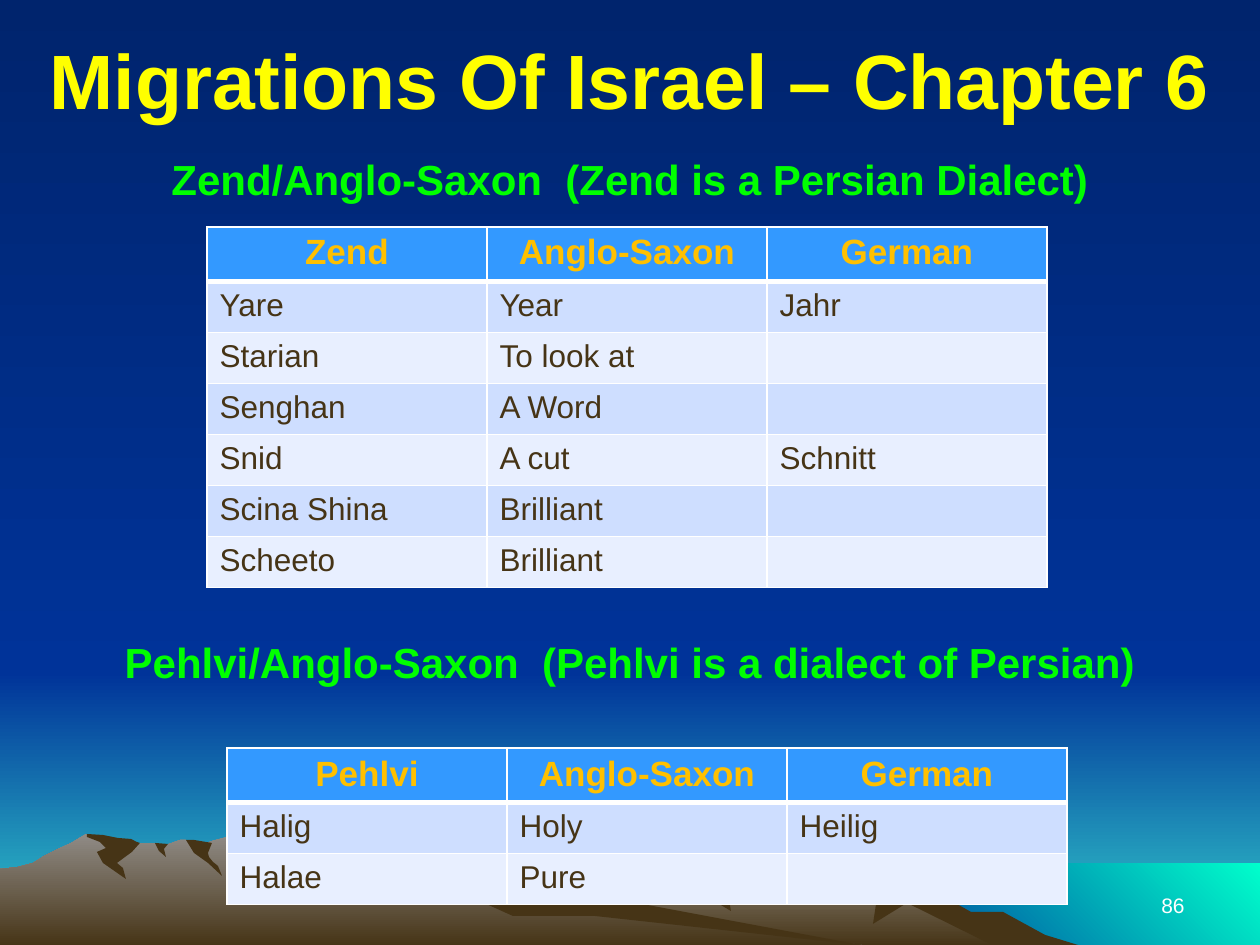
from lxml.etree import SubElement
from pptx import Presentation
from pptx.dml.color import RGBColor
from pptx.enum.text import MSO_ANCHOR as Anchor, PP_ALIGN as Align
from pptx.oxml.ns import qn
from pptx.util import Emu, Pt

EMU_PER_PX = 914400 / 126
WIDTH, HEIGHT = 1260, 945
HORIZON = 672
COLUMN_WIDTH, HEADER_HEIGHT, ROW_HEIGHT = 280, 54, 51
FONT = "Arial"
TITLE_ONLY = 5
DOWN, UP_RIGHT = 270, 45

COLORS = {
    "night": "00246D", "blue": "003399", "teal": "33CCCC", "aqua": "00FFCC",
    "earth": "463416", "right_crest": "A5A29F", "left_crest": "938F8B",
    "title": "FFFF00", "heading": "00FF00", "white": "FFFFFF",
    "header_text": "FFC000", "header_fill": "3399FF",
    "odd_row": "CEDEFF", "even_row": "E8EFFF",
}

RIGHT_RIDGE = [
    (1011, 932), (980, 916), (963, 911), (911, 879), (885, 845), (863, 832),
    (852, 839), (827, 845), (793, 845), (772, 858), (713, 878), (675, 869),
    (667, 852), (663, 848), (641, 843), (626, 845), (612, 848), (597, 833),
    (593, 829), (586, 829), (567, 837), (552, 845), (534, 847), (519, 853),
    (503, 861), (496, 863), (447, 879), (412, 893), (349, 931), (325, 946),
    (1034, 946),
]
RIGHT_SHADOWS = [
    [(1003, 912), (971, 912), (925, 886), (891, 845), (863, 832), (868, 837),
     (863, 845), (871, 857), (879, 885), (873, 924), (907, 903), (998, 948),
     (1081, 946), (1045, 935)],
    [(593, 829), (597, 834), (591, 837), (590, 845), (595, 857), (596, 869),
     (586, 916), (597, 887), (604, 882), (614, 861), (617, 859), (617, 852),
     (626, 845), (621, 844)],
    [(667, 852), (665, 854), (663, 861), (675, 878), (731, 911), (726, 882),
     (746, 868), (718, 872), (683, 863)],
    [(819, 845), (794, 845), (795, 850), (794, 852), (810, 861), (815, 856),
     (828, 862), (822, 852), (827, 845)],
    [(546, 853), (544, 848), (547, 845), (553, 844), (551, 848), (553, 856),
     (547, 862)],
]
LEFT_RIDGE = [
    (869, 946), (840, 942), (544, 897), (446, 838), (417, 835), (412, 842),
    (407, 842), (401, 837), (373, 852), (352, 858), (341, 859), (328, 852),
    (297, 858), (281, 835), (276, 832), (267, 829), (247, 829), (241, 832),
    (227, 837), (212, 841), (202, 845), (186, 840), (180, 840), (166, 845),
    (161, 845), (155, 843), (140, 843), (118, 845), (86, 834), (71, 843),
    (58, 849), (44, 856), (33, 863), (18, 867), (0, 869), (0, 946),
]
LEFT_SHADOWS = [
    [(267, 835), (262, 843), (276, 854), (292, 869), (304, 867), (336, 893),
     (329, 868), (341, 859), (335, 856), (328, 848), (309, 842), (292, 835),
     (277, 833), (268, 830)],
    [(466, 842), (446, 838), (433, 838), (427, 843), (425, 866), (438, 861),
     (445, 867), (457, 871), (471, 897), (513, 916), (595, 916), (869, 946),
     (861, 945), (573, 891), (538, 872), (505, 858), (486, 851)],
    [(401, 840), (403, 839), (401, 837), (407, 840), (412, 840), (416, 849),
     (411, 845), (406, 843), (402, 847)],
    [(194, 840), (212, 843), (208, 853), (209, 857), (213, 862), (218, 866),
     (222, 876), (208, 863), (194, 853), (186, 840)],
    [(168, 844), (164, 849), (166, 857), (159, 851), (155, 843)],
    [(137, 842), (140, 843), (132, 852), (117, 863), (123, 868), (126, 879),
     (103, 863), (97, 852), (106, 848), (100, 842), (87, 837), (87, 834),
     (103, 835), (118, 838), (131, 839)],
]

ZEND_WORDS = [
    ("Zend", "Anglo-Saxon", "German"),
    ("Yare", "Year", "Jahr"),
    ("Starian", "To look at", ""),
    ("Senghan", "A Word", ""),
    ("Snid", "A cut", "Schnitt"),
    ("Scina Shina", "Brilliant", ""),
    ("Scheeto", "Brilliant", ""),
]
PEHLVI_WORDS = [
    ("Pehlvi", "Anglo-Saxon", "German"),
    ("Halig", "Holy", "Heilig"),
    ("Halae", "Pure", ""),
]


def px(length):
    return Emu(round(length * EMU_PER_PX))


def rgb(name):
    return RGBColor.from_string(COLORS[name])


def paint(fill, colors, angle=DOWN):
    """Fill with one colour, or with a gradient between two."""
    if len(colors) == 1:
        fill.solid()
        fill.fore_color.rgb = rgb(colors[0])
        return
    fill.gradient()
    fill.gradient_angle = angle
    for stop, color in zip(fill.gradient_stops, colors):
        stop.color.rgb = rgb(color)


def add_outline(slide, points, *colors, angle=DOWN):
    builder = slide.shapes.build_freeform(*points[0], scale=EMU_PER_PX)
    builder.add_line_segments(points[1:], close=True)
    shape = builder.convert_to_shape()
    shape.shadow.inherit = False
    shape.line.fill.background()
    paint(shape.fill, colors, angle)


def add_band(slide, left, top, bottom, *colors, angle=DOWN):
    corners = [(left, top), (WIDTH, top), (WIDTH, bottom), (left, bottom)]
    add_outline(slide, corners, *colors, angle=angle)


def add_landscape(slide):
    add_band(slide, 0, HORIZON, HEIGHT, "blue", "teal")
    add_band(slide, 0, 0, HORIZON, "night", "blue")
    add_band(slide, 861, 863, 948, "blue", "aqua", angle=UP_RIGHT)
    for ridge, crest, shadows in (
        (RIGHT_RIDGE, "right_crest", RIGHT_SHADOWS),
        (LEFT_RIDGE, "left_crest", LEFT_SHADOWS),
    ):
        add_outline(slide, ridge, crest, "earth")
        for shadow in shadows:
            add_outline(slide, shadow, "earth")


def write(text_frame, text, size, color, bold=False, align=Align.LEFT):
    paragraph = text_frame.paragraphs[0]
    paragraph.text = text
    paragraph.alignment = align
    font = paragraph.font
    font.name, font.size, font.bold = FONT, Pt(size), bold
    font.color.rgb = rgb(color)


def add_title(slide, text):
    title = slide.shapes.title
    slide.shapes.element.append(title.element)  # in front of the landscape
    title.left, title.top, title.width, title.height = 0, 0, px(WIDTH), px(158)
    title.text_frame.vertical_anchor = Anchor.MIDDLE
    write(title.text_frame, text, 44, "title", True, Align.CENTER)


def add_text(slide, box, text, size, color, bold, align, anchor=Anchor.TOP):
    text_frame = slide.shapes.add_textbox(*map(px, box)).text_frame
    text_frame.word_wrap = True
    text_frame.vertical_anchor = anchor
    write(text_frame, text, size, color, bold, align)


def add_heading(slide, top, text):
    add_text(slide, (0, top, WIDTH, 63), text, 24, "heading", True, Align.CENTER)


def set_borders(cell, top, bottom):
    properties = cell._tc.get_or_add_tcPr()
    widths = {"lnL": 1, "lnR": 1, "lnT": top, "lnB": bottom}
    for index, (side, width) in enumerate(widths.items()):
        line = SubElement(properties, qn(f"a:{side}"), w=str(Pt(width)))
        properties.insert(index, line)  # borders come before the fill
        solid = SubElement(line, qn("a:solidFill"))
        SubElement(solid, qn("a:srgbClr"), val=COLORS["white"])


def add_word_table(slide, left, top, words):
    row_count, column_count = len(words), len(words[0])
    height = HEADER_HEIGHT + ROW_HEIGHT * (row_count - 1)
    box = map(px, (left, top, COLUMN_WIDTH * column_count, height))
    table = slide.shapes.add_table(row_count, column_count, *box).table
    for row, texts in enumerate(words):
        table.rows[row].height = px(ROW_HEIGHT if row else HEADER_HEIGHT)
        for column, text in enumerate(texts):
            cell = table.cell(row, column)
            if row == 0:
                fill = "header_fill"
                write(cell.text_frame, text, 20, "header_text", True, Align.CENTER)
            else:
                fill = "odd_row" if row % 2 else "even_row"
                write(cell.text_frame, text, 18, "earth")
            paint(cell.fill, [fill])
            set_borders(cell, 3 if row == 1 else 1, 3 if row == 0 else 1)


def main():
    presentation = Presentation()
    presentation.slide_width, presentation.slide_height = px(WIDTH), px(HEIGHT)
    slide = presentation.slides.add_slide(presentation.slide_layouts[TITLE_ONLY])
    paint(slide.background.fill, ("night", "blue"))
    add_landscape(slide)
    add_title(slide, "Migrations Of Israel – Chapter 6")
    add_text(slide, (903, 861, 294, 63), "86", 12, "white", False,
             Align.RIGHT, Anchor.BOTTOM)
    add_heading(slide, 147, "Zend/Anglo-Saxon  (Zend is a Persian Dialect)")
    add_word_table(slide, 207, 227, ZEND_WORDS)
    add_heading(slide, 630, "Pehlvi/Anglo-Saxon  (Pehlvi is a dialect of Persian)")
    add_word_table(slide, 227, 748, PEHLVI_WORDS)
    presentation.save("out.pptx")


if __name__ == "__main__":
    main()
